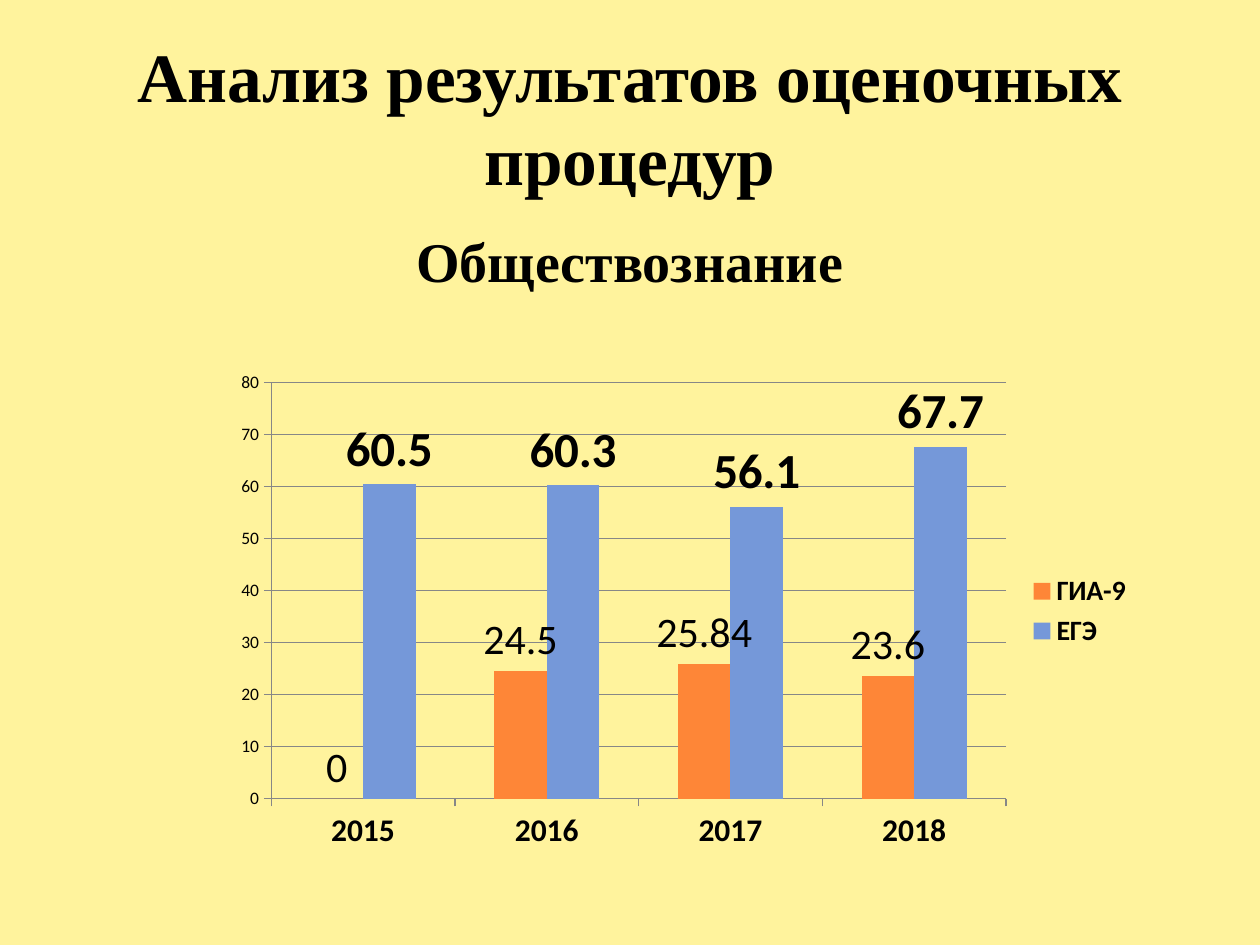
from dataclasses import dataclass

from pptx import Presentation
from pptx.chart.data import CategoryChartData
from pptx.dml.color import RGBColor
from pptx.enum.chart import XL_CHART_TYPE as ChartType
from pptx.enum.chart import XL_LABEL_POSITION as LabelPosition
from pptx.enum.chart import XL_LEGEND_POSITION as LegendPosition
from pptx.enum.chart import XL_TICK_MARK as TickMark
from pptx.enum.text import MSO_ANCHOR as Anchor
from pptx.enum.text import MSO_AUTO_SIZE as AutoSize
from pptx.enum.text import PP_ALIGN as Align
from pptx.oxml.xmlchemy import OxmlElement
from pptx.util import Inches, Pt


@dataclass(frozen=True)
class Theme:
    background: RGBColor = RGBColor.from_string("FFF39D")
    ink: RGBColor = RGBColor.from_string("000000")
    line: RGBColor = RGBColor.from_string("878787")
    text_font: str = "Times New Roman"
    chart_font: str = "Calibri"
    title_size: float = 39.6
    subject_size: float = 32
    value_size: float = 10
    year_size: float = 18
    legend_size: float = 16


@dataclass(frozen=True)
class Frame:
    left: float
    top: float
    width: float
    height: float

    def lengths(self) -> tuple:
        return tuple(Inches(n) for n in (self.left, self.top, self.width, self.height))


@dataclass(frozen=True)
class ExamSeries:
    name: str
    scores: tuple
    color: str
    label_size: float
    label_bold: bool


THEME = Theme()
YEARS = ("2015", "2016", "2017", "2018")
EXAMS = (
    ExamSeries("ГИА-9", (0, 24.5, 25.84, 23.6), "FE8637", 24, False),
    ExamSeries("ЕГЭ", (60.5, 60.3, 56.1, 67.7), "7598D9", 28, True),
)


def style_font(font, size: float, bold: bool, name: str) -> None:
    font.size = Pt(size)
    font.bold = bold
    font.name = name
    font.color.rgb = THEME.ink


def fill_placeholder(box, frame: Frame, text: str, size: float, anchor: Anchor):
    box.left, box.top, box.width, box.height = frame.lengths()
    text_frame = box.text_frame
    text_frame.text = text
    text_frame.word_wrap = True
    text_frame.auto_size = AutoSize.NONE
    text_frame.vertical_anchor = anchor
    para = text_frame.paragraphs[0]
    para.alignment = Align.CENTER
    style_font(para.font, size, True, THEME.text_font)
    return para


def remove_bullet(para) -> None:
    properties = para._p.get_or_add_pPr()
    properties.set("marL", "0")
    properties.set("indent", "0")
    properties.insert_element_before(OxmlElement("a:buNone"), "a:tabLst", "a:defRPr", "a:extLst")


def style_line(line) -> None:
    line.color.rgb = THEME.line
    line.width = Pt(0.75)


def style_axis(axis, size: float, bold: bool) -> None:
    axis.major_tick_mark = TickMark.OUTSIDE
    axis.minor_tick_mark = TickMark.NONE
    style_font(axis.tick_labels.font, size, bold, THEME.chart_font)
    style_line(axis.format.line)


def style_series(series, exam: ExamSeries) -> None:
    series.format.fill.solid()
    series.format.fill.fore_color.rgb = RGBColor.from_string(exam.color)
    series.invert_if_negative = False
    labels = series.data_labels
    labels.show_value = True
    labels.position = LabelPosition.OUTSIDE_END
    style_font(labels.font, exam.label_size, exam.label_bold, THEME.chart_font)


def add_score_chart(page, frame: Frame) -> None:
    scores = CategoryChartData()
    scores.categories = YEARS
    for exam in EXAMS:
        scores.add_series(exam.name, exam.scores)
    chart = page.shapes.add_chart(ChartType.COLUMN_CLUSTERED, *frame.lengths(), scores).chart
    chart.has_title = False
    style_font(chart.font, THEME.value_size, False, THEME.chart_font)

    plot = chart.plots[0]
    plot.vary_by_categories = False
    plot.gap_width = 150
    plot.overlap = 0
    for series, exam in zip(plot.series, EXAMS):
        style_series(series, exam)

    style_axis(chart.category_axis, THEME.year_size, True)
    value_axis = chart.value_axis
    style_axis(value_axis, THEME.value_size, False)
    value_axis.minimum_scale = 0
    value_axis.maximum_scale = 80
    value_axis.major_unit = 10
    value_axis.has_major_gridlines = True
    style_line(value_axis.major_gridlines.format.line)

    chart.has_legend = True
    chart.legend.position = LegendPosition.RIGHT
    chart.legend.include_in_layout = False
    style_font(chart.legend.font, THEME.legend_size, True, THEME.chart_font)


def main() -> None:
    deck = Presentation()
    deck.slide_width, deck.slide_height = Inches(10), Inches(7.5)
    page = deck.slides.add_slide(deck.slide_layouts[1])
    page.background.fill.solid()
    page.background.fill.fore_color.rgb = THEME.background

    fill_placeholder(page.shapes.title, Frame(0.5, 0.3, 9, 1.25),
                     "Анализ результатов оценочных процедур", THEME.title_size, Anchor.MIDDLE)
    subject = fill_placeholder(page.placeholders[1], Frame(0.5, 1.75, 9, 4.95),
                               "Обществознание", THEME.subject_size, Anchor.TOP)
    remove_bullet(subject)
    add_score_chart(page, Frame(1.77, 2.88, 7.32, 3.94))
    deck.save("out.pptx")


if __name__ == "__main__":
    main()
